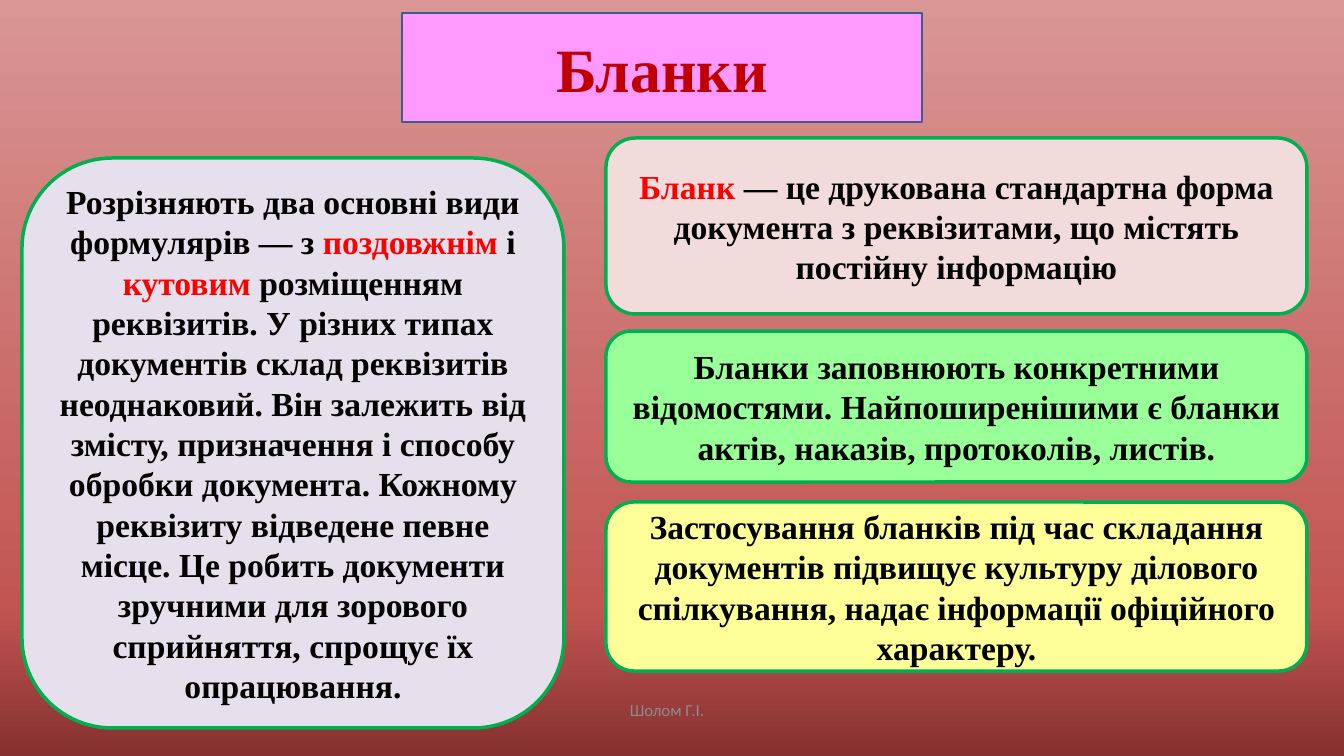
from lxml.etree import SubElement
from pptx import Presentation
from pptx.dml.color import RGBColor
from pptx.enum.shapes import MSO_SHAPE
from pptx.enum.text import MSO_ANCHOR, PP_ALIGN
from pptx.oxml.ns import qn
from pptx.util import Pt

EMU_PER_PX = 914400 / 100.8
COLORS = {
    "dark": "85312F", "brick": "C25552", "rose": "D99694",
    "pink": "FF99FF", "navy": "3A5F8C", "crimson": "C00000",
    "green": "00B050", "black": "000000", "red": "FF0000", "gray": "8C8C8C",
    "lavender": "E6E0EC", "blush": "F2DCDB", "mint": "99FF99", "yellow": "FFFF99",
}
BACKGROUND_STOPS = [(0, "dark"), (20, "brick"), (100, "rose")]
HEADING_FONT = {"name": "Times New Roman", "size": Pt(44), "bold": True}
BODY_FONT = {"name": "Times New Roman", "size": Pt(24), "bold": True}
AUTHOR_FONT = {"name": "Calibri", "size": Pt(12), "bold": False}

FORM_KINDS = [
    ("Розрізняють два основні види формулярів — з ", "black"),
    ("поздовжнім", "red"),
    (" і ", "black"),
    ("кутовим", "red"),
    (" розміщенням реквізитів. У різних типах документів склад реквізитів "
     "неоднаковий. Він залежить від змісту, призначення і способу обробки "
     "документа. Кожному реквізиту відведене певне місце. Це робить документи "
     "зручними для зорового сприйняття, спрощує їх опрацювання.", "black"),
]
DEFINITION = [
    ("Бланк", "red"),
    (" — це друкована стандартна форма документа з реквізитами, "
     "що містять постійну інформацію", "black"),
]
FILLING = [
    ("Бланки заповнюють конкретними відомостями. Найпоширенішими є бланки "
     "актів, наказів, протоколів, листів.", "black"),
]
USAGE = [
    ("Застосування бланків під час складання документів підвищує культуру "
     "ділового спілкування, надає інформації офіційного характеру.", "black"),
]
PANELS = [
    ((22, 158, 542, 570), "lavender", FORM_KINDS),
    ((606, 138, 701, 176), "blush", DEFINITION),
    ((606, 331, 701, 151), "mint", FILLING),
    ((606, 502, 701, 169), "yellow", USAGE),
]


def px(length):
    return round(length * EMU_PER_PX)


def rgb(color):
    return RGBColor.from_string(COLORS[color])


def write_text(shape, runs, font_format):
    frame = shape.text_frame
    frame.word_wrap = True
    frame.vertical_anchor = MSO_ANCHOR.MIDDLE
    paragraph = frame.paragraphs[0]
    paragraph.alignment = PP_ALIGN.CENTER
    for text, color in runs:
        run = paragraph.add_run()
        run.text = text
        for attribute, value in font_format.items():
            setattr(run.font, attribute, value)
        run.font.color.rgb = rgb(color)


def paint(shape, fill, line, width):
    shape.fill.solid()
    shape.fill.fore_color.rgb = rgb(fill)
    shape.line.color.rgb = rgb(line)
    shape.line.width = Pt(width)


def paint_background(slide):
    fill = slide.background.fill
    fill.gradient()
    fill.gradient_angle = 90
    stops = slide.element.find(".//" + qn("a:gsLst"))
    for stop in list(stops):
        stops.remove(stop)
    for percent, color in BACKGROUND_STOPS:
        stop = SubElement(stops, qn("a:gs"), pos=str(percent * 1000))
        SubElement(stop, qn("a:srgbClr"), val=COLORS[color])


def add_heading(slide, box, text):
    heading = slide.shapes.title
    for side, length in zip(("left", "top", "width", "height"), box):
        setattr(heading, side, px(length))
    outline = SubElement(heading.element.spPr, qn("a:prstGeom"), prst="snip2SameRect")
    SubElement(outline, qn("a:avLst"))
    paint(heading, "pink", "navy", 1)
    write_text(heading, [(text, "crimson")], HEADING_FONT)


def add_panel(slide, box, fill, runs):
    panel = slide.shapes.add_shape(MSO_SHAPE.ROUNDED_RECTANGLE, *map(px, box))
    panel.shadow.inherit = False
    paint(panel, fill, "green", 2.5)
    write_text(panel, runs, BODY_FONT)


def add_author(slide, box, text):
    author = slide.shapes.add_textbox(*map(px, box))
    write_text(author, [(text, "gray")], AUTHOR_FONT)


def main():
    presentation = Presentation()
    presentation.slide_width = px(1344)
    presentation.slide_height = px(756)
    slide = presentation.slides.add_slide(presentation.slide_layouts[5])
    paint_background(slide)
    add_author(slide, (440, 690, 454, 40), "Шолом Г.І.")
    add_heading(slide, (402, 13, 520, 109), "Бланки")
    for box, fill, runs in PANELS:
        add_panel(slide, box, fill, runs)
    presentation.save("out.pptx")


if __name__ == "__main__":
    main()
